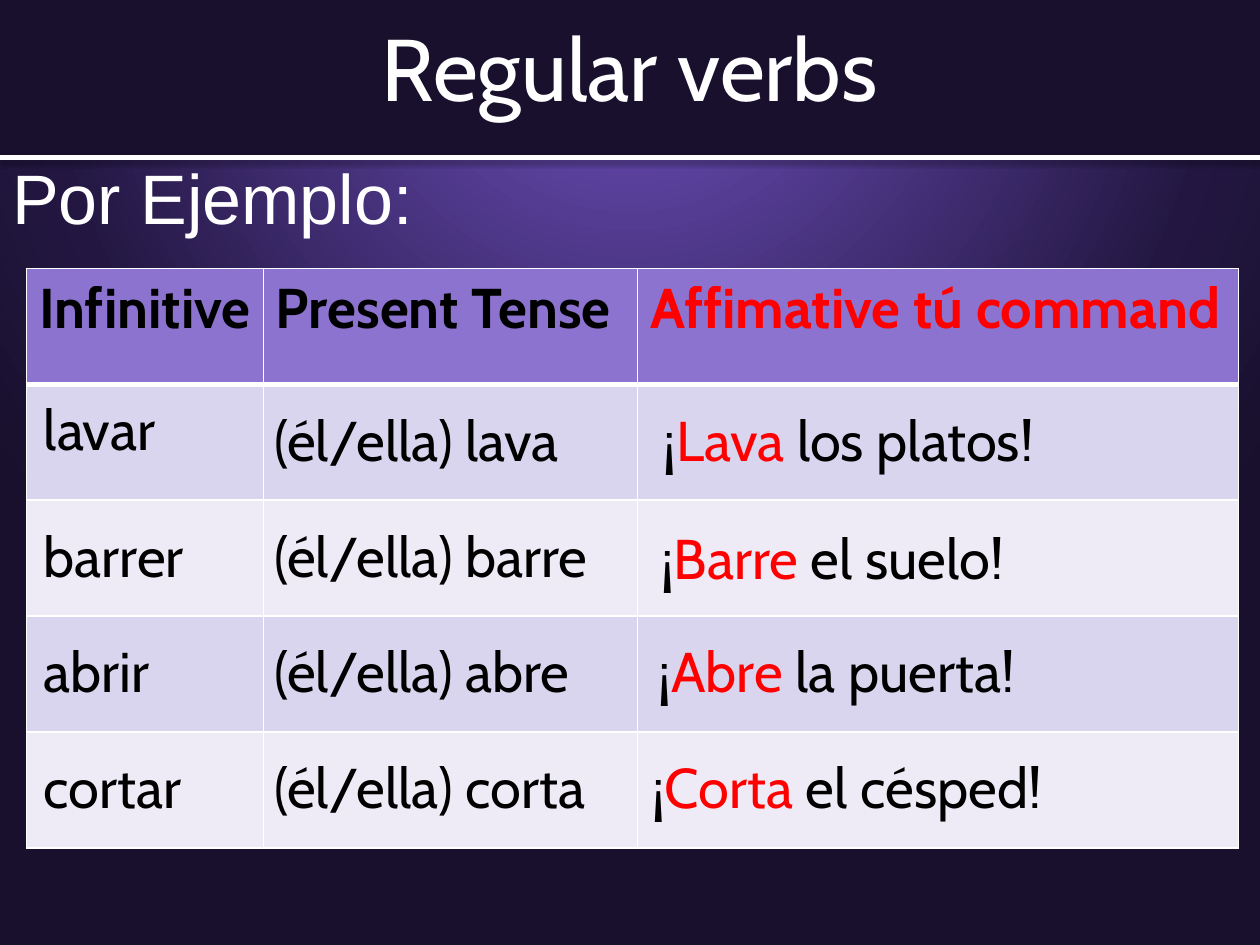
from dataclasses import dataclass

from pptx import Presentation
from pptx.dml.color import RGBColor
from pptx.enum.shapes import MSO_CONNECTOR, MSO_SHAPE
from pptx.enum.text import MSO_ANCHOR as Anchor, MSO_AUTO_SIZE as AutoSize, PP_ALIGN as Align
from pptx.oxml import parse_xml
from pptx.oxml.ns import nsdecls
from pptx.util import Inches, Pt

WIDTH, HEIGHT = 10, 7.5
BAR_HEIGHT = HEIGHT / 6
COLORS = {
    "night": "18102C", "dusk": "231742", "violet": "7152C2",
    "header": "8C73D0", "band": "DAD5EE", "pale": "EEEBF7",
    "white": "FFFFFF", "black": "000000", "red": "FF0000",
}

# Table grid and the text laid over it
TABLE_LEFT, TABLE_TOP = 0.21, 2.13
COLUMN_WIDTHS = (1.88, 2.97, 4.77)
ROW_HEIGHT = 0.92
HEADER_MARGIN_RIGHT = 0.02  # leaves room for each heading on one line
HEADERS = (("Infinitive", "black"), ("Present Tense", "black"),
           ("Affimative tú command", "red"))
FIRST_LINE, LINE_PITCH = 3.17, 2.75 / 3
TEXT_HEIGHT = 0.64


@dataclass(frozen=True)
class Verb:
    infinitive: str
    present: str
    command: str
    rest: str
    command_left: float
    infinitive_shift: float = 0
    command_shift: float = 0


VERBS = (
    Verb("lavar", "lava", "Lava", " los platos!", 5.17, infinitive_shift=-0.09),
    Verb("barrer", "barre", "Barre", " el suelo!", 5.15, command_shift=0.02),
    Verb("abrir", "abre", "Abre", " la puerta!", 5.13),
    Verb("cortar", "corta", "Corta", " el césped!", 5.08),
)


def rgb(name: str) -> RGBColor:
    return RGBColor.from_string(COLORS[name])


def write(frame, *spans: tuple[str, str], size=32, font="Cabin", bold=False,
          align=Align.LEFT, spacing=1.0) -> None:
    """Fill the first paragraph with (text, colour) spans."""
    para = frame.paragraphs[0]
    para.alignment, para.line_spacing = align, spacing
    for text, color in spans:
        span = para.add_run()
        span.text = text
        span.font.size, span.font.name, span.font.bold = Pt(size), font, bold
        span.font.color.rgb = rgb(color)


def add_text(page, left: float, top: float, width: float, height: float,
             *spans: tuple[str, str], **style) -> None:
    box = page.shapes.add_textbox(*map(Inches, (left, top, width, height)))
    box.text_frame.word_wrap = True
    write(box.text_frame, *spans, **style)


def paint_background(page) -> None:
    page.background.fill.solid()
    holder = page.element.xpath(".//p:bgPr")[0]
    stops = "".join(
        f'<a:gs pos="{share * 1000}"><a:srgbClr val="{COLORS[name]}"/></a:gs>'
        for share, name in ((0, "violet"), (75, "dusk"), (100, "night")))
    holder.replace(holder[0], parse_xml(
        f'<a:gradFill {nsdecls("a")} rotWithShape="1"><a:gsLst>{stops}</a:gsLst>'
        '<a:path path="circle"><a:fillToRect l="50000" t="-80000" r="50000" b="180000"/>'
        '</a:path></a:gradFill>'))


def add_heading(page) -> None:
    title = page.shapes.title
    bar = page.shapes.add_shape(MSO_SHAPE.RECTANGLE, 0, 0, Inches(WIDTH), Inches(BAR_HEIGHT))
    bar.shadow.inherit = False
    bar.fill.solid()
    bar.fill.fore_color.rgb = rgb("night")
    bar.line.fill.background()
    title.element.addprevious(bar.element)  # the bar lies behind the title

    title.left, title.top = 0, 0
    title.width, title.height = Inches(WIDTH), Inches(1.06)
    title.text_frame.vertical_anchor = Anchor.MIDDLE
    title.text_frame.auto_size = AutoSize.NONE
    write(title.text_frame, ("Regular verbs", "white"), size=50, align=Align.CENTER)


def add_rule(page) -> None:
    y = Inches(BAR_HEIGHT)
    rule = page.shapes.add_connector(MSO_CONNECTOR.STRAIGHT, 0, y, Inches(WIDTH), y)
    rule.line.color.rgb = rgb("white")
    rule.line.width = Pt(3)
    rule.element.spPr.append(parse_xml(
        f'<a:effectLst {nsdecls("a")}>'
        f'<a:outerShdw blurRad="{Pt(3.1)}" dist="{Pt(1.6)}" dir="5400000" rotWithShape="0">'
        f'<a:srgbClr val="{COLORS["black"]}"><a:alpha val="38000"/></a:srgbClr>'
        '</a:outerShdw></a:effectLst>'))


def format_cell(cell, fill: str, bottom: float, top: float) -> None:
    for side, points in (("L", 1), ("R", 1), ("T", top), ("B", bottom)):
        cell._tc.get_or_add_tcPr().append(parse_xml(
            f'<a:ln{side} {nsdecls("a")} w="{Pt(points)}"><a:solidFill>'
            f'<a:srgbClr val="{COLORS["white"]}"/></a:solidFill></a:ln{side}>'))
    cell.fill.solid()
    cell.fill.fore_color.rgb = rgb(fill)


def add_verb_table(page) -> None:
    row_count = len(VERBS) + 1
    table = page.shapes.add_table(
        row_count, len(COLUMN_WIDTHS), Inches(TABLE_LEFT), Inches(TABLE_TOP),
        Inches(sum(COLUMN_WIDTHS)), Inches(ROW_HEIGHT * row_count)).table
    for column, width in zip(table.columns, COLUMN_WIDTHS):
        column.width = Inches(width)
    for index, row in enumerate(table.rows):
        row.height = Inches(ROW_HEIGHT)
        fill = "header" if index == 0 else ("pale", "band")[index % 2]
        for cell in row.cells:
            format_cell(cell, fill, bottom=3 if index == 0 else 1, top=3 if index == 1 else 1)
    for cell, header in zip(table.rows[0].cells, HEADERS):
        cell.margin_right = Inches(HEADER_MARGIN_RIGHT)
        write(cell.text_frame, header, bold=True)


def add_verb(page, verb: Verb, top: float) -> None:
    add_text(page, 0.25, top + verb.infinitive_shift, 1.79, TEXT_HEIGHT,
             (verb.infinitive, "black"))
    add_text(page, 2.08, top, 3.21, TEXT_HEIGHT, (f"(él/ella) {verb.present}", "black"))
    add_text(page, verb.command_left, top + verb.command_shift, 4.33, TEXT_HEIGHT,
             ("¡", "black"), (verb.command, "red"), (verb.rest, "black"))


def main() -> None:
    deck = Presentation()
    deck.slide_width, deck.slide_height = Inches(WIDTH), Inches(HEIGHT)
    page = deck.slides.add_slide(deck.slide_layouts[5])  # title only

    # Backdrop, heading and subtitle
    paint_background(page)
    add_heading(page)
    add_text(page, 0, BAR_HEIGHT, WIDTH, HEIGHT - BAR_HEIGHT, ("Por Ejemplo:", "white"),
             size=40, font="Arial", spacing=0.9)
    add_rule(page)

    # Table and verbs
    add_verb_table(page)
    for index, verb in enumerate(VERBS):
        add_verb(page, verb, FIRST_LINE + index * LINE_PITCH)
    deck.save("out.pptx")


if __name__ == "__main__":
    main()
